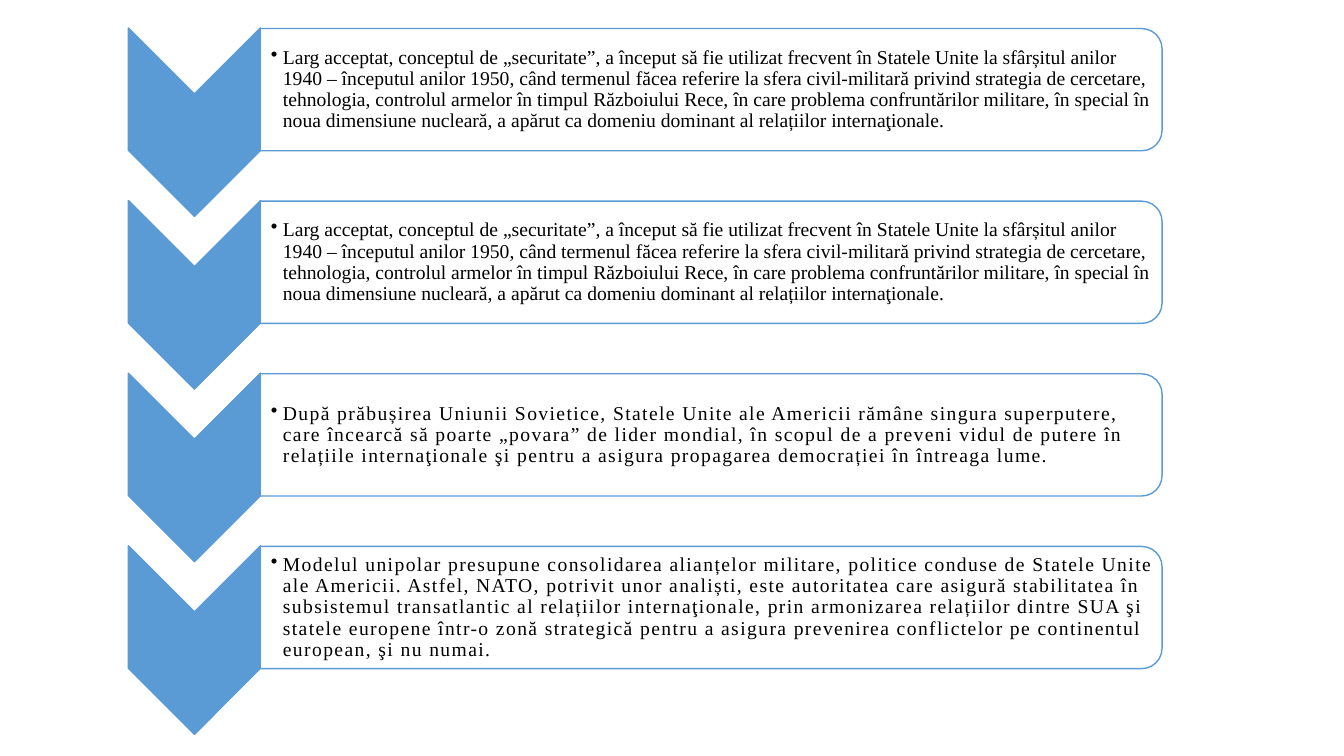
from dataclasses import dataclass

from lxml.etree import SubElement
from pptx import Presentation
from pptx.dml.color import RGBColor
from pptx.enum.shapes import MSO_SHAPE as Preset
from pptx.enum.text import MSO_ANCHOR as Anchor, PP_ALIGN as Align
from pptx.oxml.ns import qn
from pptx.shapes.autoshape import Shape
from pptx.slide import Slide
from pptx.util import Cm, Pt

BLUE, WHITE, BLACK = "5B9BD5", "FFFFFF", "000000"
FONT = "Times New Roman"

# Layout in centimetres; rows share one pitch
ROW_PITCH = 4.35
CHEVRON_X, CHEVRON_Y = 4.9, 3.08
CHEVRON_LENGTH, CHEVRON_BREADTH = 4.75, 3.33
PANEL_X, PANEL_Y = 17.92, 2.26
PANEL_WIDTH, PANEL_HEIGHT = 22.73, 3.08
TEXT_LEFT, TEXT_WIDTH, TEXT_HEIGHT = 6.55, 22.58, 2.79
HANG = 0.3


@dataclass
class Statement:
    text: str
    spacing: int = 0  # hundredths of a point


CONCEPT = Statement(
    "Larg acceptat, conceptul de „securitate”, a început să fie utilizat frecvent în "
    "Statele Unite la sfârșitul anilor 1940 – începutul anilor 1950, când termenul făcea "
    "referire la sfera civil-militară privind strategia de cercetare, tehnologia, controlul "
    "armelor în timpul Războiului Rece, în care problema confruntărilor militare, în special "
    "în noua dimensiune nucleară, a apărut ca domeniu dominant al relațiilor internaţionale."
)
SUPERPOWER = Statement(
    "După prăbușirea Uniunii Sovietice, Statele Unite ale Americii rămâne singura "
    "superputere, care încearcă să poarte „povara” de lider mondial, în scopul de a preveni "
    "vidul de putere în relațiile internaţionale şi pentru a asigura propagarea democrației "
    "în întreaga lume.",
    100,
)
UNIPOLAR = Statement(
    "Modelul unipolar presupune consolidarea alianțelor militare, politice conduse de Statele "
    "Unite ale Americii. Astfel, NATO, potrivit unor analiști, este autoritatea care asigură "
    "stabilitatea în subsistemul transatlantic al relațiilor internaţionale, prin armonizarea "
    "relațiilor dintre SUA şi statele europene într-o zonă strategică pentru a asigura "
    "prevenirea conflictelor pe continentul european, şi nu numai.",
    100,
)
STATEMENTS = [CONCEPT, CONCEPT, SUPERPOWER, UNIPOLAR]


def colour(value: str) -> RGBColor:
    return RGBColor.from_string(value)


def add_turned_shape(page: Slide, preset: Preset, center_x: float, center_y: float,
                     width: float, height: float, fill: str) -> Shape:
    """Place a shape by its centre and turn it a quarter clockwise."""
    shape = page.shapes.add_shape(preset, Cm(center_x - width / 2), Cm(center_y - height / 2),
                                  Cm(width), Cm(height))
    shape.rotation = 90
    shape.shadow.inherit = False
    shape.fill.solid()
    shape.fill.fore_color.rgb = colour(fill)
    shape.line.color.rgb = colour(BLUE)
    shape.line.width = Pt(1)
    return shape


def set_opacity(shape: Shape, percent: int) -> None:
    fill_colour = shape.fill._xPr.find(qn("a:solidFill"))[0]
    SubElement(fill_colour, qn("a:alpha"), val=str(percent * 1000))


def add_bullet_text(page: Slide, statement: Statement, center_y: float) -> None:
    box = page.shapes.add_textbox(Cm(TEXT_LEFT), Cm(center_y - TEXT_HEIGHT / 2),
                                  Cm(TEXT_WIDTH), Cm(TEXT_HEIGHT))
    frame = box.text_frame
    frame.word_wrap = True
    frame.vertical_anchor = Anchor.MIDDLE
    frame.margin_left = Cm(0.28)
    frame.margin_top = frame.margin_right = frame.margin_bottom = Cm(0.03)
    frame.text = statement.text

    para = frame.paragraphs[0]
    para.alignment = Align.LEFT
    para.line_spacing = 0.9
    properties = para._p.get_or_add_pPr()
    properties.set("marL", str(Cm(HANG)))
    properties.set("indent", str(-Cm(HANG)))
    SubElement(properties, qn("a:buChar"), char="•")

    span = para.runs[0]
    span.font.name = FONT
    span.font.size = Pt(14)
    span.font.color.rgb = colour(BLACK)
    if statement.spacing:
        span.font._element.set("spc", str(statement.spacing))


def add_row(page: Slide, statement: Statement, offset: float) -> None:
    add_turned_shape(page, Preset.CHEVRON, CHEVRON_X, CHEVRON_Y + offset,
                     CHEVRON_LENGTH, CHEVRON_BREADTH, BLUE)
    panel = add_turned_shape(page, Preset.ROUND_2_SAME_RECTANGLE, PANEL_X, PANEL_Y + offset,
                             PANEL_HEIGHT, PANEL_WIDTH, WHITE)
    set_opacity(panel, 90)
    add_bullet_text(page, statement, PANEL_Y + offset)


def main() -> None:
    deck = Presentation()
    deck.slide_width, deck.slide_height = Cm(33.87), Cm(19.05)
    page = deck.slides.add_slide(deck.slide_layouts[6])  # blank layout
    for index, statement in enumerate(STATEMENTS):
        add_row(page, statement, index * ROW_PITCH)
    deck.save("out.pptx")


if __name__ == "__main__":
    main()
